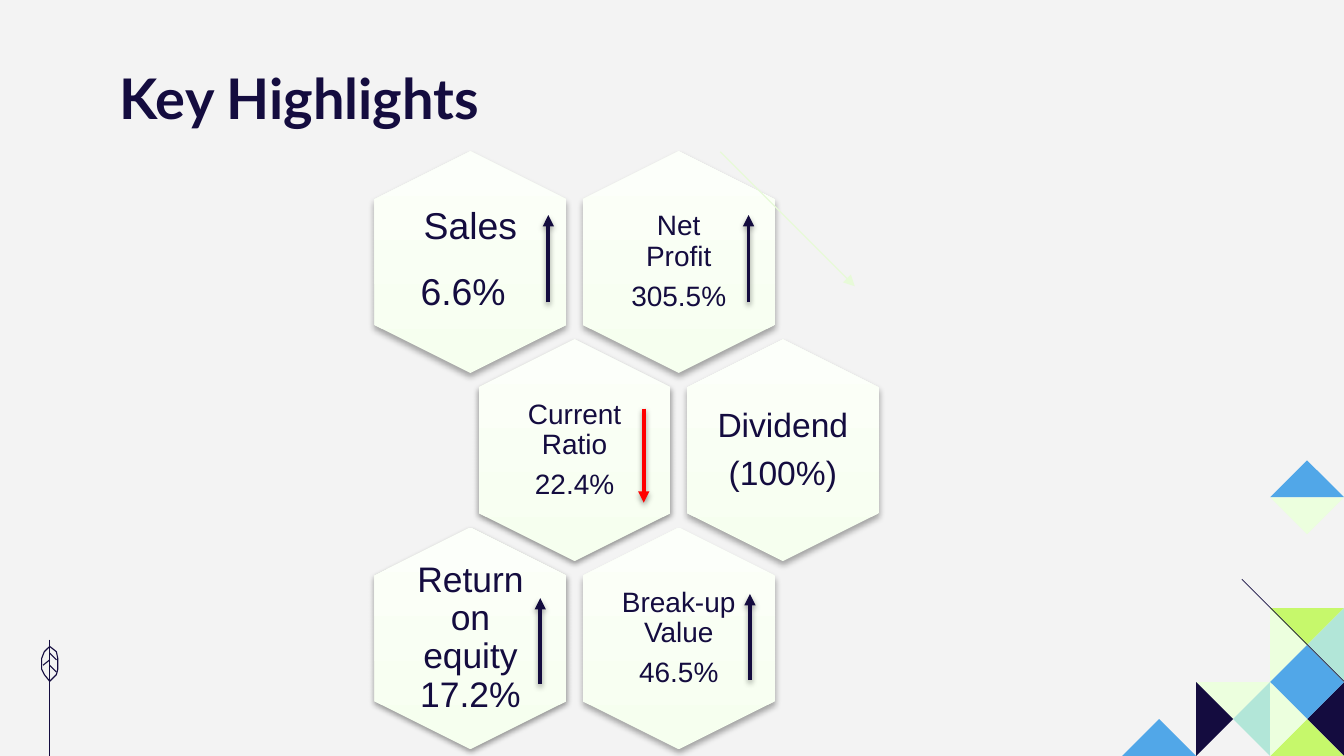
import pptx
import pptx.util
import pptx.dml.color
import pptx.enum.shapes
import pptx.enum.text
import pptx.oxml
import pptx.oxml.ns
from lxml import etree

Inches = pptx.util.Inches
Pt = pptx.util.Pt
RGBColor = pptx.dml.color.RGBColor
Shape = pptx.enum.shapes.MSO_SHAPE
Align = pptx.enum.text.PP_ALIGN
Anchor = pptx.enum.text.MSO_ANCHOR
qn = pptx.oxml.ns.qn

WIDE = 10
HIGH = WIDE * 9 / 16

NAVY = RGBColor(0x14, 0x0C, 0x3F)
RED = RGBColor(0xFF, 0x00, 0x00)
BLUE = RGBColor(0x51, 0xA7, 0xE8)
LIME = RGBColor(0xC6, 0xF8, 0x6B)
MINT = RGBColor(0xB2, 0xE6, 0xD8)
PALE = RGBColor(0xEC, 0xFF, 0xDE)
FAINT = RGBColor(0xE7, 0xFA, 0xD8)
CREAM = RGBColor(0xF6, 0xFF, 0xEF)
WHITE = RGBColor(0xFC, 0xFF, 0xFA)
GREY = RGBColor(0xF3, 0xF3, 0xF3)

SOFT = (32, 3.5, 2.2)  # shadow: opacity %, blur pt, distance pt
FIRM = (38, 3.1, 1.6)


class Deck:
    """Holds the style and the current slide."""

    def __init__(self, slide, font="Arial", color=NAVY):
        self.slide = slide
        self.shapes = slide.shapes
        self.font = font
        self.color = color

    def title(self, text):
        box = self.shapes.title
        box.left, box.top = Inches(0.79), Inches(0.37)
        box.width, box.height = Inches(8.43), Inches(0.63)
        frame = box.text_frame
        frame.text = text
        self.inset(frame, 0.1)
        frame.vertical_anchor = Anchor.TOP
        para = frame.paragraphs[0]
        para.alignment = Align.LEFT
        para.font.name, para.font.size, para.font.bold = "Lato", Pt(30), True
        para.font.color.rgb = self.color

    def inset(self, frame, gap):
        frame.margin_left = frame.margin_right = Inches(gap)
        frame.margin_top = frame.margin_bottom = Inches(gap)

    def shadow(self, props, cast):
        """Replace the effects with one downward shadow, or with none."""
        for old in props.findall(qn("a:effectLst")):
            props.remove(old)
        group = etree.SubElement(props, qn("a:effectLst"))
        if cast:
            alpha, blur, dist = cast
            drop = etree.SubElement(
                group, qn("a:outerShdw"), blurRad=str(Pt(blur)),
                dist=str(Pt(dist)), dir="5400000", rotWithShape="0")
            tone = etree.SubElement(drop, qn("a:srgbClr"), val="000000")
            etree.SubElement(tone, qn("a:alpha"), val=str(alpha * 1000))

    def outline(self, points, fill=None, line=None):
        pts = [(Inches(x), Inches(y)) for x, y in points]
        form = self.shapes.build_freeform(*pts[0])
        form.add_line_segments(pts[1:], close=True)
        shape = form.convert_to_shape()
        shape.shadow.inherit = False
        if fill is None:
            shape.fill.background()
            shape.line.color.rgb = self.color
            shape.line.width = Pt(line)
        else:
            shape.fill.solid()
            shape.fill.fore_color.rgb = fill
            shape.line.fill.background()

    def line(self, x1, y1, x2, y2, width, color=NAVY, head=False, cast=None):
        link = self.shapes.add_connector(
            pptx.enum.shapes.MSO_CONNECTOR.STRAIGHT,
            Inches(x1), Inches(y1), Inches(x2), Inches(y2))
        link.line.color.rgb = color
        link.line.width = Pt(width)
        props = link.element.spPr
        if head:
            etree.SubElement(props.find(qn("a:ln")), qn("a:tailEnd"), type="triangle")
        self.shadow(props, cast)

    def hexagon(self, x, y, cast):
        """A hexagon centred on x, y with a point at the top."""
        wide, high = 1.65, 1.43
        shape = self.shapes.add_shape(
            Shape.HEXAGON, Inches(x - wide / 2), Inches(y - high / 2),
            Inches(wide), Inches(high))
        shape.rotation = 90
        shape.adjustments[0] = 0.25
        shape.fill.gradient()
        shape.fill.gradient_angle = 90
        for stop, color in zip(shape.fill.gradient_stops, (CREAM, WHITE)):
            stop.color.rgb = color
        props = shape.element.spPr
        props.find(qn("a:gradFill")).set("rotWithShape", "0")
        shape.line.fill.background()
        self.shadow(props, cast)

    def label(self, x, y, lines, size, gap):
        wide, high = 0.99, 1.13
        box = self.shapes.add_textbox(
            Inches(x - wide / 2), Inches(y - high / 2), Inches(wide), Inches(high))
        frame = box.text_frame
        frame.word_wrap = True
        frame.vertical_anchor = Anchor.MIDDLE
        self.inset(frame, gap)
        frame.text = "\n".join(lines)
        for para in frame.paragraphs:
            para.alignment = Align.CENTER
            para.line_spacing = 0.9
            para.space_after = Pt(size * 0.35)
            para.font.name, para.font.size = self.font, Pt(size)
            para.font.color.rgb = self.color
        return frame


def main():
    prs = pptx.Presentation()
    prs.slide_width, prs.slide_height = Inches(WIDE), Inches(HIGH)
    slide = prs.slides.add_slide(prs.slide_layouts[5])
    slide.background.fill.solid()
    slide.background.fill.fore_color.rgb = GREY
    deck = Deck(slide)

    # Corner mosaic: apex in grid units, direction from apex to base, colour
    unit = 0.55 / 2
    left, top = WIDE - 6 * unit, HIGH - 8 * unit
    mosaic = [
        (3, 7, 0, -1, PALE), (3, 7, 1, 0, MINT), (5, 5, -1, 0, PALE),
        (5, 5, 0, -1, LIME), (5, 5, 0, 1, BLUE), (5, 5, 1, 0, MINT),
        (5, 7, 1, 0, NAVY), (5, 7, 0, 1, LIME), (5, 7, 0, -1, BLUE),
        (5, 7, -1, 0, PALE), (3, 7, -1, 0, NAVY), (1, 7, 0, 1, BLUE),
        (5, 2, 0, -1, PALE), (5, 0, 0, 1, BLUE),
    ]
    for x, y, dx, dy, color in mosaic:
        grid = [(x, y), (x + dx - dy, y + dy + dx), (x + dx + dy, y + dy - dx)]
        deck.outline([(left + a * unit, top + b * unit) for a, b in grid], color)
    deck.line(9.24, 4.31, 10, 5.07, 0.42)

    # Leaf on a stem
    deck.outline([(0.37, 4.81), (0.42, 4.85), (0.43, 4.9), (0.43, 4.98),
                  (0.42, 5.02), (0.37, 5.07), (0.33, 5.02), (0.31, 4.98),
                  (0.31, 4.9), (0.33, 4.85)], line=0.6)
    deck.line(0.37, 4.76, 0.37, 5.07, 0.6)
    deck.line(0.37, 5.07, 0.37, HIGH, 0.42)
    for y, x, drop in ((4.86, 0.42, 0.05), (4.91, 0.32, 0.04), (4.95, 0.42, 0.05)):
        deck.line(0.37, y, x, y + drop, 0.6)

    deck.title("Key Highlights")

    # Honeycomb: column (in whole cells), row, lines, size, inset, shadow
    cells = [
        (1, 0, ["Net Profit", "305.5%"], 15, 0.07, SOFT),
        (0, 0, ["Sales", "6.6%"], 20, 0, SOFT),
        (0.5, 1, ["Current Ratio", "22.4%"], 15, 0.07, FIRM),
        (1.5, 1, ["Dividend", "(100%)"], 18, 0, SOFT),
        (1, 2, ["Break-up Value", "46.5%"], 15, 0.07, SOFT),
        (0, 2, ["Return on equity 17.2%"], 19, 0, FIRM),
    ]
    for col, row, lines, size, gap, cast in cells:
        x, y = 3.5 + col * 1.55, 1.95 + row * 1.4
        deck.hexagon(x, y, cast)
        frame = deck.label(x, y, lines, size, gap)
        if lines[0] == "Sales":  # a larger space opens up the second line
            space = frame.paragraphs[1].add_run()
            space.text = " "
            space.font.size = Pt(28)

    # Trend arrows
    for x, start, end, color in (
            (4.08, 2.25, 1.6, NAVY), (5.58, 5.06, 4.42, NAVY),
            (4.79, 3.04, 3.74, RED), (5.57, 2.25, 1.6, NAVY),
            (4.02, 5.09, 4.45, NAVY)):
        deck.line(x, start, x, end, 2, color, True, FIRM)
    deck.line(5.36, 1.13, 6.36, 2.13, 0.75, FAINT, True)

    prs.save("out.pptx")


if __name__ == "__main__":
    main()
